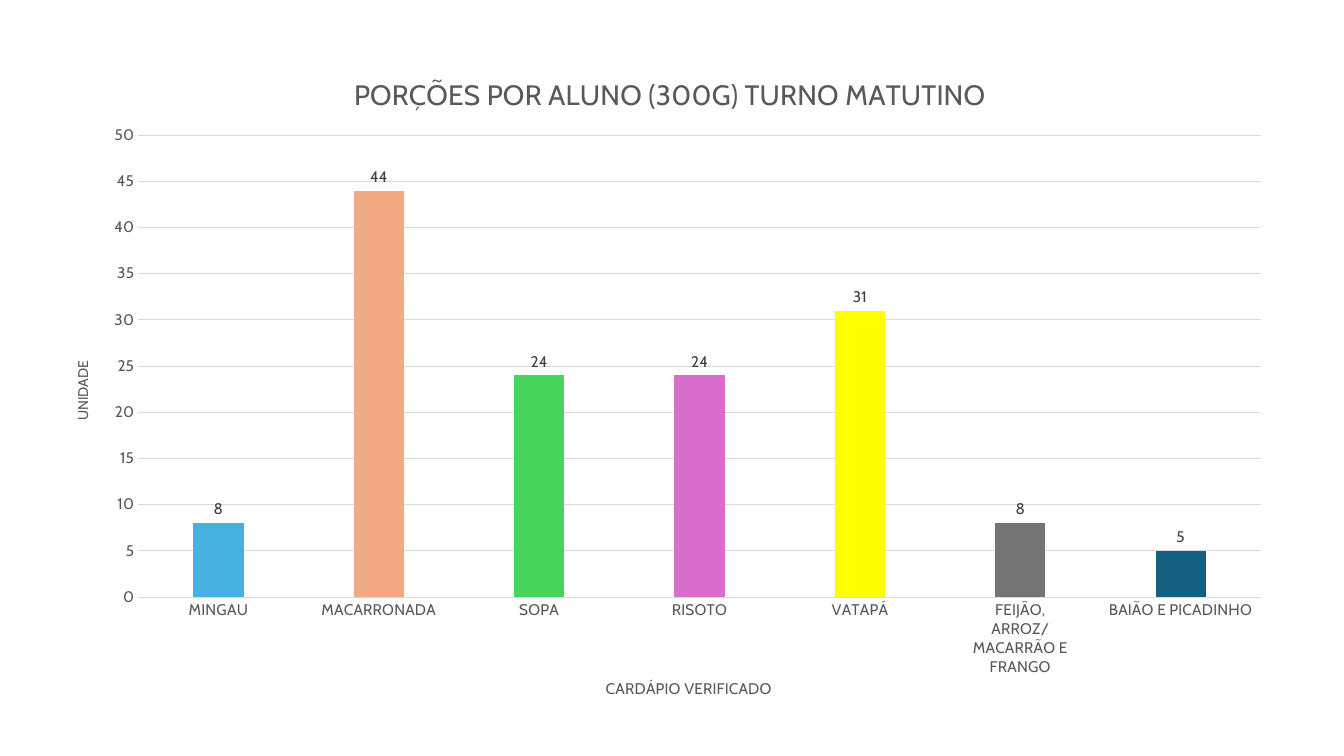
from dataclasses import dataclass

from pptx import Presentation
from pptx.chart.data import CategoryChartData
from pptx.dml.color import RGBColor
from pptx.enum.chart import XL_CHART_TYPE, XL_LABEL_POSITION, XL_TICK_MARK
from pptx.oxml import parse_xml
from pptx.oxml.ns import nsdecls, qn
from pptx.util import Inches, Pt

COLUMN = XL_CHART_TYPE.COLUMN_CLUSTERED
ABOVE = XL_LABEL_POSITION.OUTSIDE_END
NO_TICK = XL_TICK_MARK.NONE


@dataclass(frozen=True)
class Theme:
    """Colours, font and type sizes of the slide."""
    font: str = "Cabin"
    text: str = "595959"
    label: str = "404040"
    rule: str = "D9D9D9"
    base: str = "156082"
    title: int = 20
    body: int = 11
    small: int = 10


THEME = Theme()
MEALS = [
    ("MINGAU", 8, "46B1E1"),
    ("MACARRONADA", 44, "F2AA84"),
    ("SOPA", 24, "47D45A"),
    ("RISOTO", 24, "D86ECC"),
    ("VATAPÁ", 31, "FFFF00"),
    ("FEIJÃO, ARROZ/MACARRÃO E FRANGO", 8, "747474"),
    ("BAIÃO E PICADINHO", 5, THEME.base),
]


def style(font, size, color):
    """Set the face, size and colour of a font."""
    font.name, font.size, font.bold = THEME.font, Pt(size), False
    font.color.rgb = RGBColor.from_string(color)


def rule(line):
    """Draw a thin grey line."""
    line.width = Pt(0.75)
    line.color.rgb = RGBColor.from_string(THEME.rule)


def layout(x, y, size=None):
    """Return a manual layout in fractions of the chart."""
    parts = [("xMode", "edge"), ("yMode", "edge"), ("x", x), ("y", y)]
    if size:
        parts.insert(0, ("layoutTarget", "inner"))
        parts += zip("wh", size)
    body = "".join(f'<c:{tag} val="{val}"/>' for tag, val in parts)
    return parse_xml(f'<c:layout {nsdecls("c")}><c:manualLayout>{body}'
                     '</c:manualLayout></c:layout>')


def drop(node):
    """Remove any layout that a chart part has."""
    for old in node.findall(qn("c:layout")):
        node.remove(old)


def head(title, text, size, x, y):
    """Write a title and place it in the chart."""
    run = title.text_frame.paragraphs[0].add_run()
    run.text = text
    style(run.font, size, THEME.text)
    node = title._element
    drop(node)
    node.find(qn("c:tx")).addnext(layout(x, y))


def axes(chart):
    """Format both axes and their titles."""
    cat, val = chart.category_axis, chart.value_axis
    for axis in (cat, val):
        axis.major_tick_mark = axis.minor_tick_mark = NO_TICK
        style(axis.tick_labels.font, THEME.body, THEME.text)
    rule(cat.format.line)
    head(cat.axis_title, "CARDÁPIO VERIFICADO", THEME.body, 0.45, 0.94)
    val.minimum_scale, val.maximum_scale, val.major_unit = 0, 50, 5
    val.format.line.fill.background()
    rule(val.major_gridlines.format.line)
    val.tick_labels.number_format = "0"
    val.tick_labels.number_format_is_linked = False
    head(val.axis_title, "UNIDADE", THEME.small, 0.02, 0.47)


def bars(plot):
    """Colour the columns and show their values."""
    plot.gap_width, plot.overlap = 219, -27
    plot.vary_by_categories = False
    row = plot.series[0]
    row.format.fill.solid()
    row.format.fill.fore_color.rgb = RGBColor.from_string(THEME.base)
    for i, (_, _, color) in enumerate(MEALS):
        fill = row.points[i].format.fill
        fill.solid()
        fill.fore_color.rgb = RGBColor.from_string(color)
    tags = row.data_labels
    tags.show_value, tags.position = True, ABOVE
    tags.number_format, tags.number_format_is_linked = "0", False
    style(tags.font, THEME.body, THEME.label)


def meals(slide, x, y, w, h):
    """Place the chart of portions in the given box."""
    data = CategoryChartData(number_format="0")
    data.categories = [name for name, _, _ in MEALS]
    data.add_series("Series 1", [count for _, count, _ in MEALS])
    chart = slide.shapes.add_chart(COLUMN, x, y, w, h, data).chart
    chart.has_legend = False
    style(chart.font, THEME.small, "000000")
    head(chart.chart_title, "PORÇÕES POR ALUNO (300G) TURNO MATUTINO",
         THEME.title, 0.245, 0.04)
    area = chart._chartSpace.chart.plotArea
    drop(area)
    area.insert(0, layout(0.075, 0.138, (0.906, 0.686)))
    axes(chart)
    bars(chart.plots[0])


def main():
    """Build and save the slide."""
    deck = Presentation()
    deck.slide_width, deck.slide_height = Inches(13.33), Inches(7.5)
    slide = deck.slides.add_slide(deck.slide_layouts[6])
    meals(slide, Inches(0.45), Inches(0.42), Inches(12.29), Inches(6.68))
    deck.save("out.pptx")


if __name__ == "__main__":
    main()
